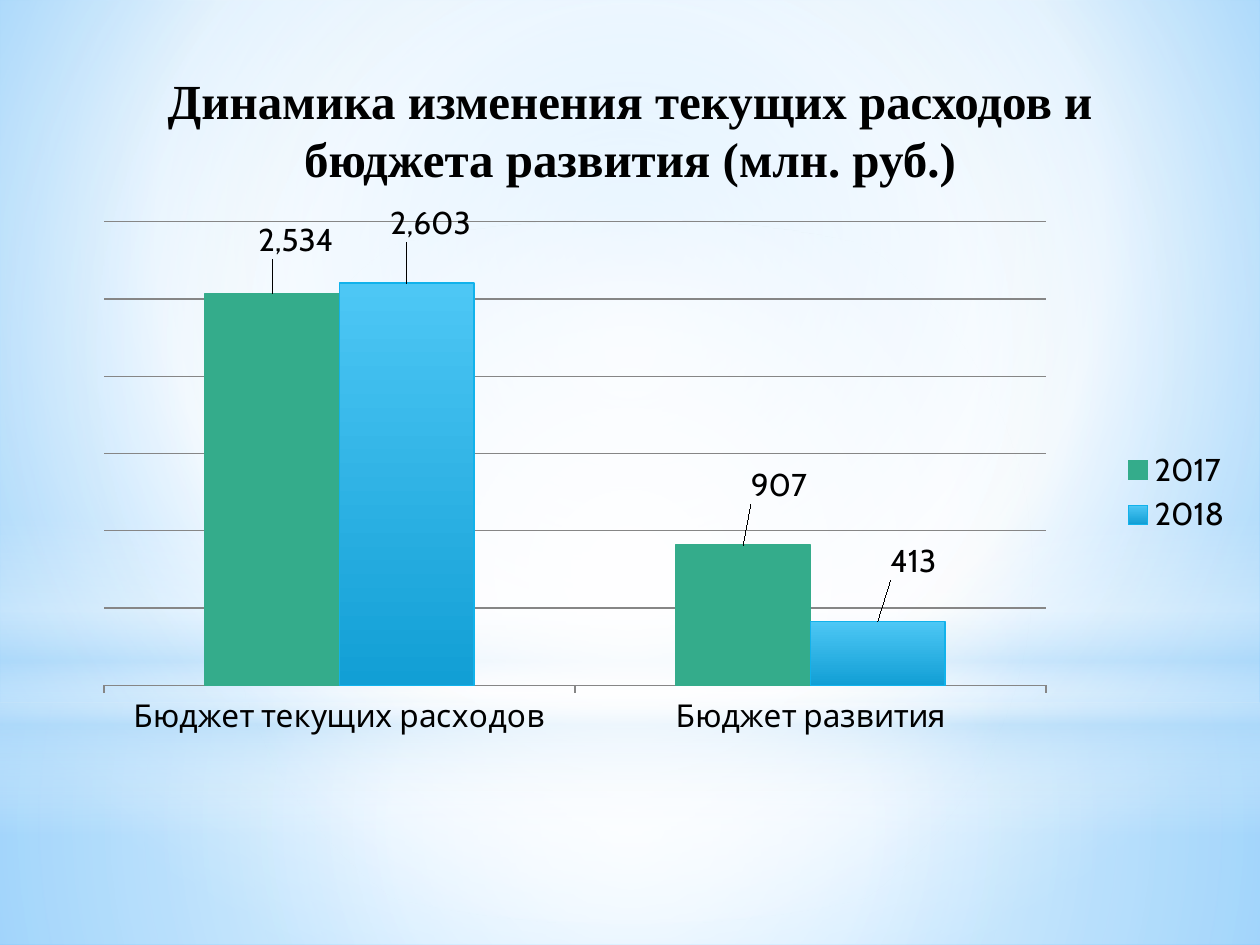
from lxml.etree import SubElement
from pptx import Presentation
from pptx.chart.data import CategoryChartData
from pptx.dml.color import RGBColor
from pptx.enum.chart import (XL_CHART_TYPE, XL_LABEL_POSITION,
                             XL_LEGEND_POSITION, XL_TICK_MARK)
from pptx.enum.shapes import MSO_SHAPE
from pptx.enum.text import MSO_ANCHOR, PP_ALIGN
from pptx.oxml.ns import qn
from pptx.util import Pt

# Content
TITLE = "Динамика изменения текущих расходов и бюджета развития (млн. руб.)"
CATS = ["Бюджет текущих расходов", "Бюджет развития"]
DATA = {"2017": [2534, 907], "2018": [2603, 413]}
FORMAT = "#,##0"
# Label shifts as parts of the chart size, series by series
SHIFTS = [(0.02, -0.05), (0.03, -0.06), (0.02, -0.06), (0.03, -0.06)]
PLOT = {"x": 0.042, "y": 0.045, "w": 0.791, "h": 0.779}

BLACK = RGBColor(0, 0, 0)
GRAY = RGBColor(0x86, 0x86, 0x86)
GREEN = RGBColor(0x34, 0xAC, 0x8B)
SKY = RGBColor(0x4D, 0xC7, 0xF5)
BLUE = RGBColor(0x12, 0x9F, 0xD5)
EDGE = RGBColor(0x12, 0xB2, 0xEB)
WHITE = RGBColor(0xFF, 0xFF, 0xFF)
PALE = RGBColor(0xB4, 0xDC, 0xFA)
LIGHT = RGBColor(0x9E, 0xD5, 0xFF)
DEEP = RGBColor(0x5B, 0xB9, 0xFF)

# Backdrop: stops are (place, colour, opacity), all in percent
BACK = [(0, LIGHT, 100), (60, WHITE, 100), (100, DEEP, 100)]
MID = (50, 50, 50, 50)
LAYERS = [
    (MSO_SHAPE.RECTANGLE, (0, 703, 1260, 242), MID,
     [(0, WHITE, 91), (37, WHITE, 76), (100, PALE, 79)]),
    (MSO_SHAPE.RECTANGLE, (0, 0, 1260, 703), MID,
     [(0, WHITE, 89), (48, WHITE, 62), (100, PALE, 79)]),
    (MSO_SHAPE.RECTANGLE, (0, 519, 1260, 315), None,
     [(0, WHITE, 0), (29, WHITE, 30), (45, PALE, 40),
      (55, WHITE, 26), (65, PALE, 60), (100, WHITE, 0)]),
    (MSO_SHAPE.OVAL, (0, 220, 1260, 703), MID,
     [(0, WHITE, 100), (56, WHITE, 0)]),
]
PX = 914400 / 126


def px(*nums):
    return [round(n * PX) for n in nums]


def blend(item, fill, stops, focus):
    """Fill with a radial blend around focus, or a downward one without it."""
    fill.gradient()
    grad = item.element.find(".//" + qn("a:gradFill"))
    grad.clear()
    grad.set("rotWithShape", "1")
    group = SubElement(grad, qn("a:gsLst"))
    for place, color, alpha in stops:
        stop = SubElement(group, qn("a:gs"), pos=str(place * 1000))
        tint = SubElement(stop, qn("a:srgbClr"), val=str(color))
        SubElement(tint, qn("a:alpha"), val=str(alpha * 1000))
    if focus:
        path = SubElement(grad, qn("a:path"), path="circle")
        sides = {k: str(v * 1000) for k, v in zip("ltrb", focus)}
        SubElement(path, qn("a:fillToRect"), **sides)
    else:
        SubElement(grad, qn("a:lin"), ang="5400000", scaled="0")


def place(parent, index, vals):
    """Give a chart part a manual layout."""
    for old in parent.findall(qn("c:layout")):
        parent.remove(old)
    layout = SubElement(parent, qn("c:layout"))
    parent.insert(index, layout)
    manual = SubElement(layout, qn("c:manualLayout"))
    for tag, val in vals.items():
        SubElement(manual, qn("c:" + tag), val=str(val))


deck = Presentation()
deck.slide_width, deck.slide_height = px(1260, 945)
slide = deck.slides.add_slide(deck.slide_layouts[5])

# Backdrop
blend(slide, slide.background.fill, BACK, (20, 10, 20, 60))
for kind, box, focus, stops in LAYERS:
    layer = slide.shapes.add_shape(kind, *px(*box))
    layer.shadow.inherit = False
    layer.line.fill.background()
    blend(layer, layer.fill, stops, focus)

# Title, brought in front of the backdrop
title = slide.shapes.title
title.element.getparent().append(title.element)
title.left, title.top, title.width, title.height = px(63, 63, 1134, 132)
frame = title.text_frame
frame.text = TITLE
frame.word_wrap = True
frame.vertical_anchor = MSO_ANCHOR.MIDDLE
para = frame.paragraphs[0]
para.alignment = PP_ALIGN.CENTER
font = para.runs[0].font
font.name, font.size, font.bold = "Times New Roman", Pt(28), True
font.color.rgb = BLACK

# Chart
data = CategoryChartData(number_format=FORMAT)
data.categories = CATS
for name, vals in DATA.items():
    data.add_series(name, vals)
chart = slide.shapes.add_chart(XL_CHART_TYPE.COLUMN_CLUSTERED,
                               *px(54, 195, 1191, 595), data).chart
chart.has_title = False
chart.font.name, chart.font.size = "Cabin", Pt(18)
chart.font.color.rgb = BLACK
chart.has_legend = True
chart.legend.position = XL_LEGEND_POSITION.RIGHT
chart.legend.include_in_layout = False
place(chart.element.find(".//" + qn("c:plotArea")), 0,
      {"layoutTarget": "inner", "xMode": "edge", "yMode": "edge", **PLOT})

# Axes
axis = chart.value_axis
axis.visible = False
axis.minimum_scale, axis.maximum_scale, axis.major_unit = 0, 3000, 500
axis.has_major_gridlines = True
axis.major_gridlines.format.line.color.rgb = GRAY
axis.major_gridlines.format.line.width = Pt(0.75)
base = chart.category_axis
base.major_tick_mark = XL_TICK_MARK.OUTSIDE
base.format.line.color.rgb = GRAY
base.format.line.width = Pt(0.75)

# Columns and labels
plot = chart.plots[0]
plot.gap_width, plot.overlap = 150, 0
plot.vary_by_categories = False
old, new = plot.series
old.format.fill.solid()
old.format.fill.fore_color.rgb = GREEN
fill = new.format.fill
fill.gradient()
fill.gradient_angle = 270
for stop, color in zip(fill.gradient_stops, (SKY, BLUE)):
    stop.color.rgb = color
for series, color in ((old, GREEN), (new, EDGE)):
    series.format.line.color.rgb = color
    series.format.line.width = Pt(0.75)
    labels = series.data_labels
    labels.show_value = True
    labels.number_format = FORMAT
    labels.number_format_is_linked = False
    for i in range(len(CATS)):
        series.points[i].data_label.position = XL_LABEL_POSITION.OUTSIDE_END
for label, (x, y) in zip(chart.element.iter(qn("c:dLbl")), SHIFTS):
    place(label, 1, {"x": x, "y": y})

deck.save("out.pptx")
